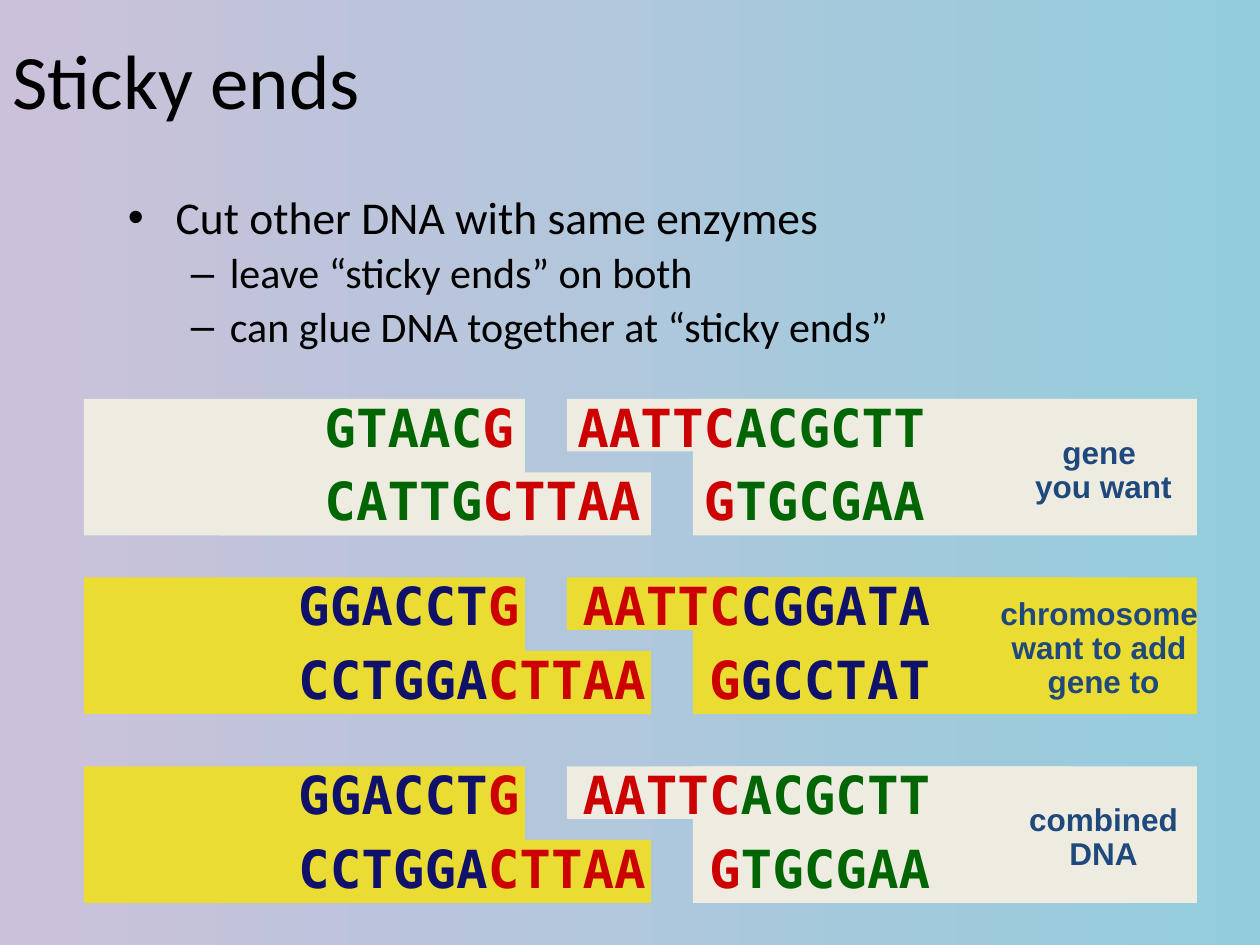
from dataclasses import dataclass

import pptx
import pptx.dml.color
import pptx.enum.shapes
import pptx.enum.text
import pptx.oxml
import pptx.oxml.ns
import pptx.util

CELLS_PER_INCH = 12
BLACK, NAVY = "000000", "1F497D"
GREEN, BLUE, RED = "006604", "0F116A", "CC0000"
CREAM, YELLOW = "EEECE1", "EBDC34"
CHARACTER_WIDTH = 30 * 0.602 / 72 * CELLS_PER_INCH
GAP_CHARACTERS = 2
CAPTION_CENTER = (105.1, 6.87)
NAMESPACE = pptx.oxml.ns.nsdecls("a")


@dataclass(frozen=True)
class Block:
    column: float
    row: float
    columns: float
    rows: float
    is_left: bool


@dataclass(frozen=True)
class Half:
    top: str
    bottom: str
    letters: str
    fill: str


@dataclass(frozen=True)
class Molecule:
    row: float
    strand_column: float
    left: Half
    right: Half
    caption: str
    caption_columns: float


@dataclass(frozen=True)
class Bullet:
    text: str
    level: int
    mark: str
    size: float
    margin: float
    hanging: float


BLOCKS = (
    Block(54, 0, 48, 5, False),
    Block(21, 7, 41, 6, True),
    Block(66, 0, 48, 13, False),
    Block(8, 0, 42, 13, True),
)
GENE_LEFT = Half("GTAAC", "CATTG", GREEN, CREAM)
GENE_RIGHT = Half("ACGCTT", "TGCGAA", GREEN, CREAM)
CHROMOSOME_LEFT = Half("GGACCT", "CCTGGA", BLUE, YELLOW)
CHROMOSOME_RIGHT = Half("CGGATA", "GCCTAT", BLUE, YELLOW)
MOLECULES = (
    Molecule(38, 20, GENE_LEFT, GENE_RIGHT, "gene \nyou want", 15.4),
    Molecule(55, 19, CHROMOSOME_LEFT, CHROMOSOME_RIGHT,
             "chromosome \nwant to add \ngene to", 22),
    Molecule(73, 19, CHROMOSOME_LEFT, GENE_RIGHT, "combined\nDNA", 16.5),
)
BULLETS = (
    Bullet("Cut other DNA with same enzymes", 0, "•", 26, 0.38, 0.38),
    Bullet("leave “sticky ends” on both", 1, "–", 24, 0.81, 0.31),
    Bullet("can glue DNA together at “sticky ends”", 1, "–", 24, 0.81, 0.31),
)


def cells(count: float) -> int:
    return pptx.util.Inches(count / CELLS_PER_INCH)


def color(value: str) -> pptx.dml.color.RGBColor:
    return pptx.dml.color.RGBColor.from_string(value)


def set_font(font, name: str, size: float, value: str, bold: bool = False) -> None:
    font.name, font.size, font.bold = name, pptx.util.Pt(size), bold
    font.color.rgb = color(value)


def add_property(paragraph, markup: str) -> None:
    properties = paragraph._p.get_or_add_pPr()
    properties.insert_element_before(pptx.oxml.parse_xml(markup), "a:defRPr", "a:extLst")


def add_text_box(shapes, column: float, row: float, columns: float, rows: float):
    shape = shapes.add_textbox(cells(column), cells(row), cells(columns), cells(rows))
    shape.text_frame.word_wrap = True
    return shape.text_frame


def add_title(slide, text: str) -> None:
    title = slide.shapes.title
    title.left, title.top, title.width, title.height = 0, 0, cells(108), cells(15)
    frame = title.text_frame
    frame.text = text
    frame.vertical_anchor = pptx.enum.text.MSO_ANCHOR.MIDDLE
    paragraph = frame.paragraphs[0]
    paragraph.alignment = pptx.enum.text.PP_ALIGN.LEFT
    set_font(paragraph.font, "Calibri", 44, BLACK)


def add_bullets(slide) -> None:
    frame = add_text_box(slide.shapes, 11, 18, 102, 23)
    for index, bullet in enumerate(BULLETS):
        paragraph = frame.add_paragraph() if index else frame.paragraphs[0]
        paragraph.text, paragraph.level = bullet.text, bullet.level
        paragraph.line_spacing = 0.9
        paragraph.space_before = pptx.util.Pt(bullet.size * 0.2)
        set_font(paragraph.font, "Calibri", bullet.size, BLACK)
        properties = paragraph._p.get_or_add_pPr()
        properties.set("marL", str(pptx.util.Inches(bullet.margin)))
        properties.set("indent", str(-pptx.util.Inches(bullet.hanging)))
        add_property(paragraph, f'<a:buFont {NAMESPACE} typeface="Arial"/>')
        add_property(paragraph, f'<a:buChar {NAMESPACE} char="{bullet.mark}"/>')


def add_block(shapes, block: Block, molecule: Molecule) -> None:
    shape = shapes.add_shape(
        pptx.enum.shapes.MSO_SHAPE.RECTANGLE, cells(block.column),
        cells(molecule.row + block.row), cells(block.columns), cells(block.rows))
    shape.shadow.inherit = False
    shape.fill.solid()
    half = molecule.left if block.is_left else molecule.right
    shape.fill.fore_color.rgb = color(half.fill)
    shape.line.fill.background()


def add_strands(shapes, molecule: Molecule) -> None:
    left, right = molecule.left, molecule.right
    width = 79
    frame = add_text_box(shapes, molecule.strand_column, molecule.row - 1, width, 14.16)
    frame.vertical_anchor = pptx.enum.text.MSO_ANCHOR.MIDDLE
    length = len(left.top + "GAATTC" + right.top) + GAP_CHARACTERS
    frame.margin_left = cells((width - length * CHARACTER_WIDTH) / 2)
    strands = ((left.top, "G", "AATTC", right.top),
               (left.bottom, "CTTAA", "G", right.bottom))
    for index, (start, left_end, right_end, finish) in enumerate(strands):
        paragraph = frame.add_paragraph() if index else frame.paragraphs[0]
        paragraph.alignment = pptx.enum.text.PP_ALIGN.LEFT
        paragraph.space_after = pptx.util.Pt(0 if index else 6)
        stop = cells((len(start + left_end) + GAP_CHARACTERS) * CHARACTER_WIDTH)
        add_property(paragraph, f'<a:tabLst {NAMESPACE}><a:tab pos="{stop}" algn="l"/></a:tabLst>')
        for text, value in ((start, left.letters), (f"{left_end}\t{right_end}", RED),
                            (finish, right.letters)):
            run = paragraph.add_run()
            run.text = text
            set_font(run.font, "DejaVu Sans Mono", 30, value, True)


def add_caption(shapes, molecule: Molecule) -> None:
    center, middle = CAPTION_CENTER
    columns = molecule.caption_columns
    rows = 1.2 + 3.24 * len(molecule.caption.splitlines())
    frame = add_text_box(shapes, center - columns / 2,
                         molecule.row + middle - rows / 2, columns, rows)
    frame.word_wrap = False
    frame.auto_size = pptx.enum.text.MSO_AUTO_SIZE.SHAPE_TO_FIT_TEXT
    frame.margin_left = frame.margin_right = 0
    frame.vertical_anchor = pptx.enum.text.MSO_ANCHOR.MIDDLE
    paragraph = frame.paragraphs[0]
    paragraph.text = molecule.caption
    paragraph.alignment = pptx.enum.text.PP_ALIGN.CENTER
    paragraph.line_spacing = 0.9
    set_font(paragraph.font, "Arial", 18, NAVY, True)


def main() -> None:
    """Build the slide on sticky ends, laid out on a grid of twelfths of an inch."""
    presentation = pptx.Presentation()
    presentation.slide_width, presentation.slide_height = cells(120), cells(90)
    slide = presentation.slides.add_slide(presentation.slide_layouts[5])
    background = slide.background.fill
    background.gradient()
    background.gradient_angle = 0
    for stop, value in zip(background.gradient_stops, ("CCC1DA", "93CDDD")):
        stop.color.rgb = color(value)
    add_title(slide, "Sticky ends")
    add_bullets(slide)
    for molecule in MOLECULES:
        shapes = slide.shapes.add_group_shape().shapes
        for block in BLOCKS:
            add_block(shapes, block, molecule)
        add_strands(shapes, molecule)
        add_caption(shapes, molecule)
    presentation.save("out.pptx")


if __name__ == "__main__":
    main()
